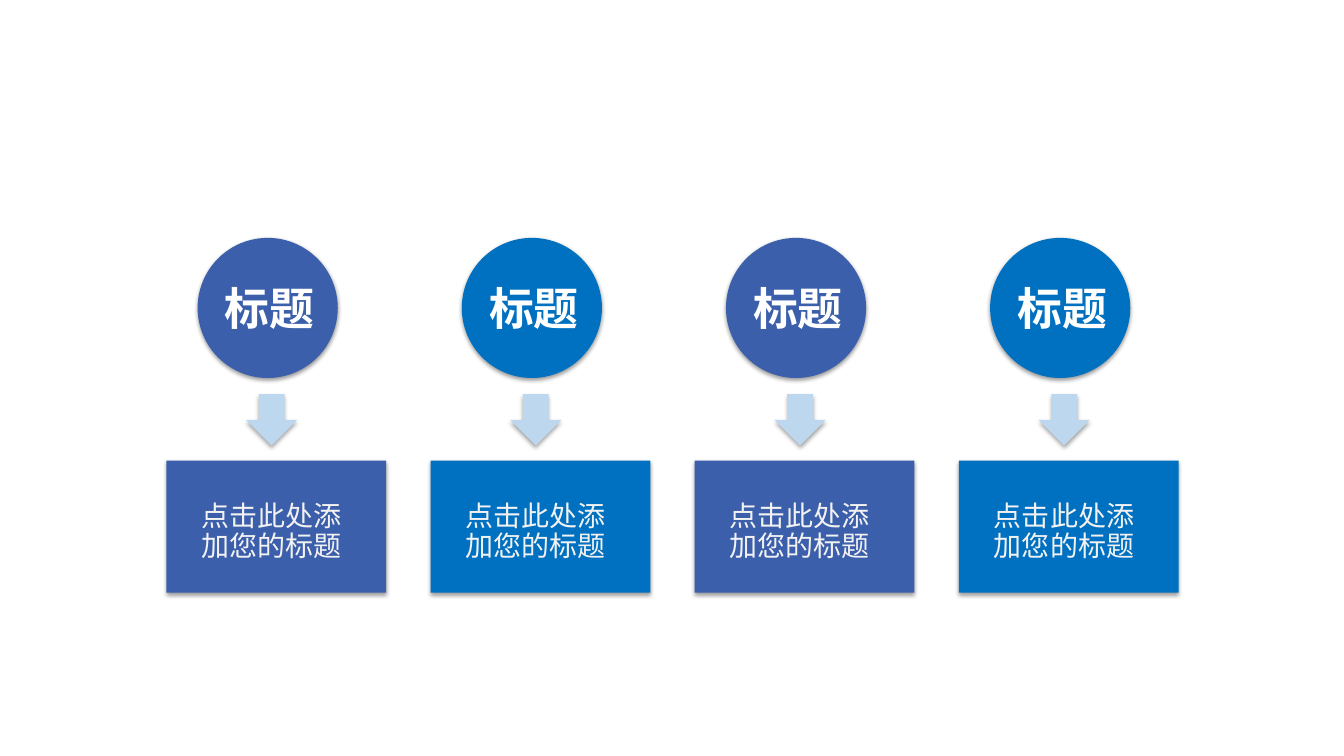
from dataclasses import dataclass

from lxml import etree
from pptx import Presentation
from pptx import util as u
from pptx.dml import color
from pptx.enum import shapes, text
from pptx.oxml import ns

FONT = "Noto Sans CJK SC"
LEFT = 1.65
STEP = 2.62
FILLS = ["3B5FAB", "0070C0"]


@dataclass
class Form:
    kind: shapes.MSO_SHAPE
    box: tuple[float, float, float, float]
    fill: str | None
    alpha: int
    drop: float


@dataclass
class Label:
    words: str
    box: tuple[float, float, float, float]
    size: int
    tint: str
    bold: bool
    wrap: bool
    align: text.PP_ALIGN
    lead: float


FORMS = [
    Form(shapes.MSO_SHAPE.OVAL, (0.31, 2.36, 1.39, 1.39), None, 38, 1.6),
    Form(shapes.MSO_SHAPE.DOWN_ARROW, (0.79, 3.91, 0.51, 0.51), "BDD7EE", 35, 1.8),
    Form(shapes.MSO_SHAPE.RECTANGLE, (0, 4.57, 2.18, 1.31), None, 38, 1.6),
]
LABELS = [
    Label("点击此处添加您的标题", (0.25, 4.93, 1.66, 0.71), 20, "F2F2F2",
          False, True, text.PP_ALIGN.LEFT, 0.9),
    Label("标题", (0.48, 2.74, 1.09, 0.64), 32, "FFFFFF",
          True, False, text.PP_ALIGN.CENTER, 1.0),
]


def rgb(code: str) -> color.RGBColor:
    return color.RGBColor.from_string(code)


def place(box: tuple[float, float, float, float], left: float) -> list[u.Length]:
    x, y, wide, high = box
    return [u.Inches(n) for n in (left + x, y, wide, high)]


def shade(shape, alpha: int, drop: float) -> None:
    shape.shadow.inherit = False
    effect = shape.element.spPr.find(ns.qn("a:effectLst"))
    outer = etree.SubElement(
        effect, ns.qn("a:outerShdw"), blurRad=str(u.Pt(3.1)),
        dist=str(u.Pt(drop)), dir="5400000", algn="t", rotWithShape="0")
    tone = etree.SubElement(outer, ns.qn("a:srgbClr"), val="000000")
    etree.SubElement(tone, ns.qn("a:alpha"), val=str(alpha * 1000))


def draw(group, form: Form, left: float, fill: str) -> None:
    shape = group.shapes.add_shape(form.kind, *place(form.box, left))
    shape.fill.solid()
    shape.fill.fore_color.rgb = rgb(form.fill or fill)
    shape.line.fill.background()
    shade(shape, form.alpha, form.drop)


def write(group, label: Label, left: float) -> None:
    frame = group.shapes.add_textbox(*place(label.box, left)).text_frame
    frame.text = label.words
    frame.word_wrap = label.wrap
    frame.auto_size = text.MSO_AUTO_SIZE.SHAPE_TO_FIT_TEXT
    para = frame.paragraphs[0]
    para.alignment = label.align
    para.line_spacing = label.lead
    run = para.runs[0]
    run.font.name = FONT
    run.font.size = u.Pt(label.size)
    run.font.bold = label.bold
    run.font.color.rgb = rgb(label.tint)
    etree.SubElement(run.font._element, ns.qn("a:ea"), typeface=FONT)


def main() -> None:
    deck = Presentation()
    deck.slide_width = u.Inches(13.33)
    deck.slide_height = u.Inches(7.5)
    slide = deck.slides.add_slide(deck.slide_layouts[6])
    for i in range(4):
        group = slide.shapes.add_group_shape()
        left = LEFT + i * STEP
        for form in FORMS:
            draw(group, form, left, FILLS[i % 2])
        for label in LABELS:
            write(group, label, left)
    deck.save("out.pptx")


if __name__ == "__main__":
    main()
